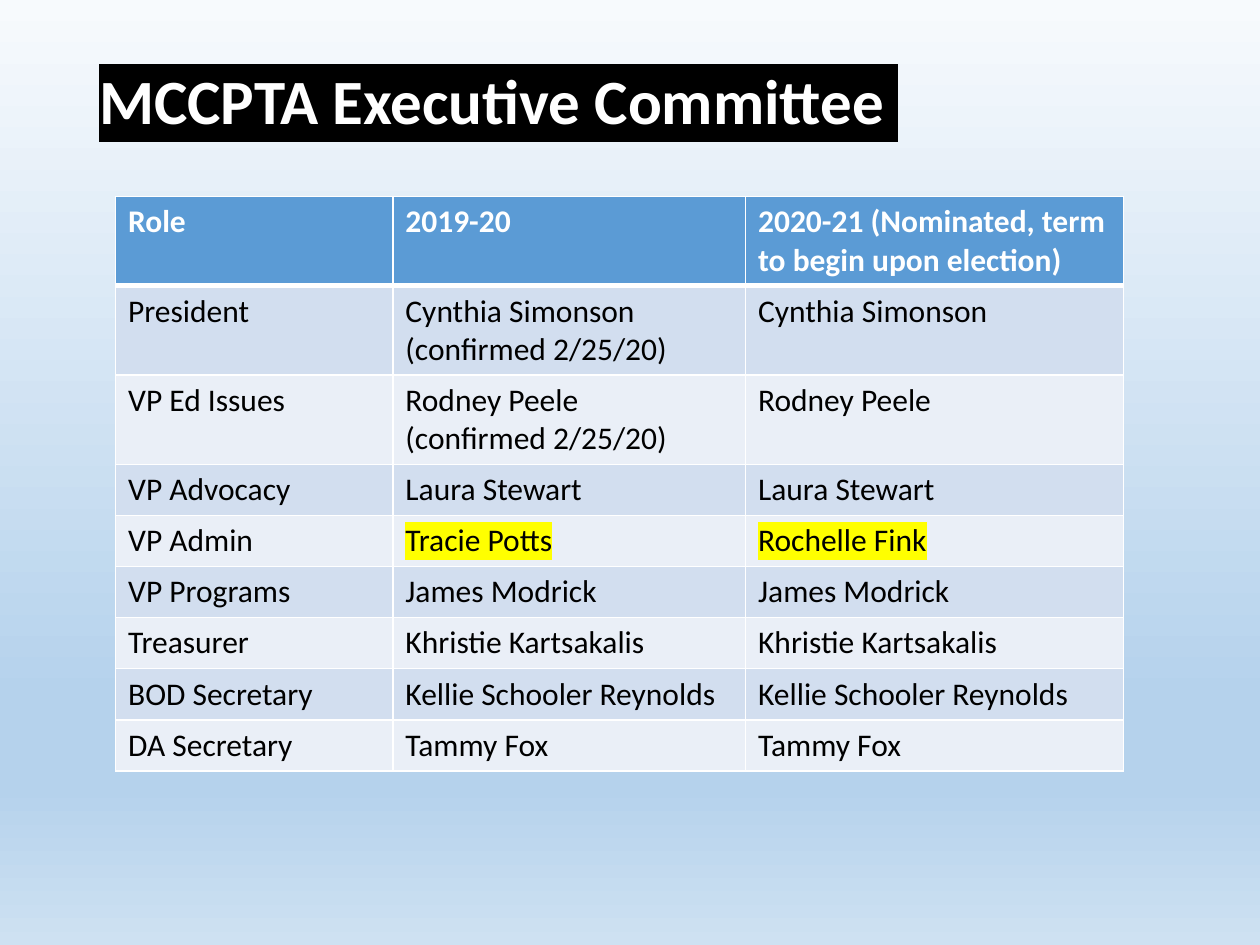
from lxml import etree
from pptx import Presentation
from pptx import util as u
from pptx.dml.color import RGBColor
from pptx.enum import text
from pptx.oxml.ns import qn

COLORS = {
    "white": "FFFFFF", "black": "000000", "yellow": "FFFF00",
    "header": "5B9BD5", "odd_row": "D2DEEF", "even_row": "EAEFF7",
}
BACKGROUND_STOPS = [(0, "F7FAFD"), (74, "B5D2EC"), (83, "B5D2EC"), (100, "CEE1F2")]
COLUMN_WIDTHS = [5.59, 7.11, 7.62]
ONE_LINE, TWO_LINES = 1.03, 1.8
HIGHLIGHTED = {"Tracie Potts", "Rochelle Fink"}
COMMITTEE = [
    ("Role", "2019-20", "2020-21 (Nominated, term to begin upon election)"),
    ("President", "Cynthia Simonson (confirmed 2/25/20)", "Cynthia Simonson"),
    ("VP Ed Issues", "Rodney Peele\n(confirmed 2/25/20)", "Rodney Peele"),
    ("VP Advocacy", "Laura Stewart", "Laura Stewart"),
    ("VP Admin", "Tracie Potts", "Rochelle Fink"),
    ("VP Programs", "James Modrick", "James Modrick"),
    ("Treasurer", "Khristie Kartsakalis", "Khristie Kartsakalis"),
    ("BOD Secretary", "Kellie Schooler Reynolds", "Kellie Schooler Reynolds"),
    ("DA Secretary", "Tammy Fox", "Tammy Fox"),
]


def add_color(parent, tag, color):
    """Append a DrawingML element that wraps one RGB colour."""
    holder = etree.SubElement(parent, qn(tag))
    etree.SubElement(holder, qn("a:srgbClr"), val=color)
    return holder


class SlideStyle:
    """The look of the deck and the slide being filled."""

    font_name = "Calibri"

    def __init__(self, slide):
        self.slide = slide

    def background(self, stops):
        fill = self.slide.background.fill
        fill.gradient()
        fill.gradient_angle = 270
        stop_list = next(self.slide.element.iter(qn("a:gsLst")))
        for stop in list(stop_list):
            stop_list.remove(stop)
        for percent, color in stops:
            add_color(stop_list, "a:gs", color).set("pos", str(percent * 1000))

    def wording(self, frame, words, size, color, bold=False, highlight=None):
        frame.text = words
        for paragraph in frame.paragraphs:
            for run in paragraph.runs:
                formats = {"name": self.font_name, "size": u.Pt(size), "bold": bold}
                for attribute, value in formats.items():
                    setattr(run.font, attribute, value)
                run.font.color.rgb = RGBColor.from_string(COLORS[color])
                if highlight:
                    properties = run._r.get_or_add_rPr()
                    marker = add_color(properties, "a:highlight", COLORS[highlight])
                    properties.find(qn("a:latin")).addprevious(marker)

    def title(self, words, left, top, width, height):
        box = self.slide.shapes.add_textbox(*map(u.Cm, (left, top, width, height)))
        frame = box.text_frame
        frame.word_wrap = True
        frame.vertical_anchor = text.MSO_ANCHOR.MIDDLE
        self.wording(frame, words, 36, "white", bold=True, highlight="black")
        frame.paragraphs[0].line_spacing = 0.9

    def borders(self, cell, **widths):
        """Draw white cell borders; widths in points by side, 1 by default."""
        properties = cell._tc.get_or_add_tcPr()
        for side in "LRTB":
            line = etree.SubElement(properties, qn(f"a:ln{side}"),
                                    w=str(int(u.Pt(widths.get(side, 1)))))
            add_color(line, "a:solidFill", COLORS["white"])

    def table(self, rows, left, top, column_widths, row_heights):
        frame = self.slide.shapes.add_table(
            len(rows), len(column_widths), u.Cm(left), u.Cm(top),
            u.Cm(sum(column_widths)), u.Cm(sum(row_heights)))
        grid = frame.table
        for column, width in zip(grid.columns, column_widths):
            column.width = u.Cm(width)
        for number, (row, height, entries) in enumerate(
                zip(grid.rows, row_heights, rows)):
            row.height = u.Cm(height)
            is_header = number == 0
            band = "header" if is_header else "odd_row" if number % 2 else "even_row"
            thick_side = {0: {"B": 3}, 1: {"T": 3}}.get(number, {})
            for cell, entry in zip(row.cells, entries):
                self.borders(cell, **thick_side)
                cell.fill.solid()
                cell.fill.fore_color.rgb = RGBColor.from_string(COLORS[band])
                self.wording(cell.text_frame, entry, 18,
                             "white" if is_header else "black", bold=is_header,
                             highlight="yellow" if entry in HIGHLIGHTED else None)


def main():
    deck = Presentation()
    deck.slide_width, deck.slide_height = u.Cm(25.4), u.Cm(19.05)
    committee = SlideStyle(deck.slides.add_slide(deck.slide_layouts[6]))
    committee.background(BACKGROUND_STOPS)
    committee.title("MCCPTA Executive Committee ", 1.75, 1.02, 21.9, 2.16)
    row_heights = [TWO_LINES] * 3 + [ONE_LINE] * (len(COMMITTEE) - 3)
    committee.table(COMMITTEE, 2.33, 3.96, COLUMN_WIDTHS, row_heights)
    deck.save("out.pptx")


if __name__ == "__main__":
    main()
